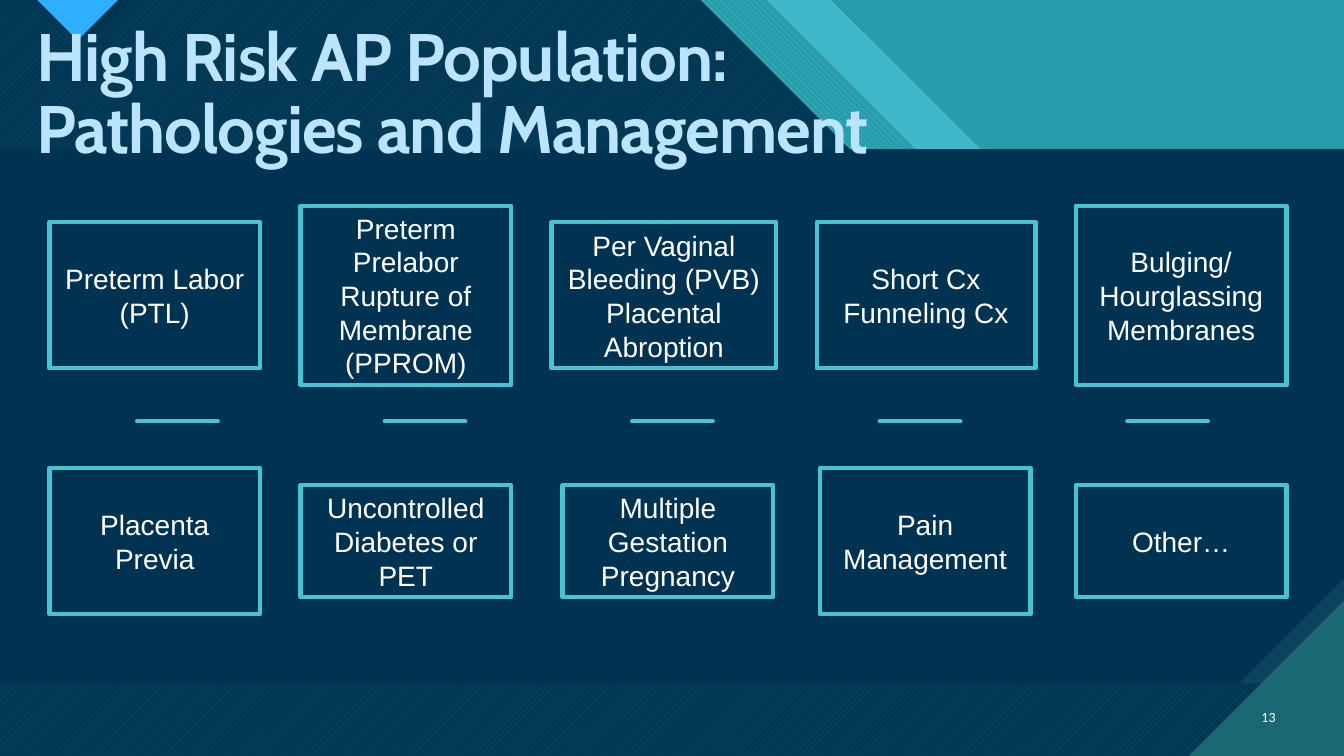
from lxml import etree
from pptx import Presentation
from pptx.dml.color import RGBColor
from pptx.enum.dml import MSO_PATTERN
from pptx.enum.shapes import MSO_CONNECTOR, MSO_SHAPE
from pptx.enum.text import MSO_ANCHOR, PP_ALIGN
from pptx.oxml.ns import qn
from pptx.util import Inches, Pt

RECT = MSO_SHAPE.RECTANGLE
STRAIGHT = MSO_CONNECTOR.STRAIGHT
UP, DOWN = MSO_PATTERN.WIDE_UPWARD_DIAGONAL, MSO_PATTERN.WIDE_DOWNWARD_DIAGONAL
TOP, MIDDLE = MSO_ANCHOR.TOP, MSO_ANCHOR.MIDDLE
LEFT, CENTER, RIGHT = PP_ALIGN.LEFT, PP_ALIGN.CENTER, PP_ALIGN.RIGHT

WIDE, HIGH = 13.33, 7.5
NAVY, AQUA, TEAL, WHITE = "003352", "47C3D3", "299CAB", "FFFFFF"
TITLE = "High Risk AP Population:\vPathologies and Management"
NUMBER = "13"
BAND, FOOT = 1.48, 6.78

DECOR = [
    ([(0, 0), (WIDE, 0), (WIDE, HIGH), (0, HIGH)], (UP, "07415F", "033855")),
    ([(8.25, 0), (WIDE, 0), (WIDE, BAND), (8.25 + BAND, BAND)], TEAL),
    ([(7.6, 0), (8.25, 0), (8.25 + BAND, BAND), (7.6 + BAND, BAND)], "3FB9C9"),
    ([(6.95, 0), (7.6, 0), (7.6 + BAND, BAND), (6.95 + BAND, BAND)], (DOWN, AQUA, TEAL)),
    ([(0.48, 0), (1.31, 0), (0.9, 0.41)], NAVY),
    ([(0.37, 0), (1.17, 0), (0.77, 0.4)], "2FAFFF"),
    ([(0, BAND), (WIDE, BAND), (WIDE, FOOT), (0, FOOT)], "0C4360"),
    ([(0, BAND), (WIDE, BAND), (WIDE, 5.74), (12.29, FOOT), (0, FOOT)], NAVY),
    ([(11.79, HIGH), (WIDE, HIGH), (WIDE, 5.96)], "1B6872"),
]

ROWS = [
    (2.93, [
        (0.49, 2.09, 1.45, ["Preterm Labor", "(PTL)"]),
        (2.98, 2.09, 1.78, ["Preterm Prelabor Rupture of Membrane (PPROM)"]),
        (5.47, 2.23, 1.45, ["Per Vaginal Bleeding (PVB)", "Placental Abroption"]),
        (8.1, 2.17, 1.45, ["Short Cx", "Funneling Cx"]),
        (10.67, 2.09, 1.78, ["Bulging/", "Hourglassing", "Membranes"]),
    ]),
    (5.37, [
        (0.49, 2.09, 1.45, ["Placenta Previa"]),
        (2.98, 2.09, 1.11, ["Uncontrolled Diabetes or PET"]),
        (5.58, 2.09, 1.11, ["Multiple Gestation Pregnancy"]),
        (8.13, 2.09, 1.45, ["Pain Management"]),
        (10.67, 2.09, 1.11, ["Other…"]),
    ]),
]
DASH_X, DASH_Y, DASH_W, DASH_GAP = 1.36, 4.18, 0.8, 2.455


def color(code):
    return RGBColor.from_string(code)


def paint(fill, look):
    if isinstance(look, str):
        fill.solid()
        fill.fore_color.rgb = color(look)
    else:
        fill.patterned()
        fill.pattern = look[0]
        fill.fore_color.rgb = color(look[1])
        fill.back_color.rgb = color(look[2])


def stroke(shape):
    shape.line.color.rgb = color(AQUA)
    shape.line.width = Pt(3)
    edge = shape.get_or_add_ln()
    edge.set("cap", "rnd")
    etree.SubElement(edge, qn("a:round"))


def write(shape, lines, size, face, code, align, anchor):
    frame = shape.text_frame
    frame.word_wrap = True
    frame.vertical_anchor = anchor
    frame.text = "\n".join(lines)
    for para in frame.paragraphs:
        para.alignment = align
        para.font.size = Pt(size)
        para.font.name = face
        para.font.color.rgb = color(code)
    return frame


def draw(shapes, points, look):
    spots = [(Inches(x), Inches(y)) for x, y in points]
    form = shapes.build_freeform(*spots[0])
    form.add_line_segments(spots[1:], close=True)
    shape = form.convert_to_shape()
    shape.shadow.inherit = False
    paint(shape.fill, look)
    shape.line.fill.background()


def head(title):
    title.left, title.top = Inches(0.26), Inches(0.18)
    title.width, title.height = Inches(12.26), Inches(1.56)
    frame = write(title, [TITLE], 48, "Cabin", "BAE4FF", LEFT, TOP)
    para = frame.paragraphs[0]
    para.line_spacing = 0.9
    para.font.bold = True
    for run in para.runs:
        run.font.bold = True
        run._r.get_or_add_rPr().set("spc", "-70")
    title._element.getparent().append(title._element)


def main():
    deck = Presentation()
    deck.slide_width, deck.slide_height = Inches(WIDE), Inches(HIGH)
    slide = deck.slides.add_slide(deck.slide_layouts[5])
    shapes = slide.shapes
    paint(slide.background.fill, NAVY)

    for points, look in DECOR:
        draw(shapes, points, look)
    head(shapes.title)

    for i in range(5):
        x = DASH_X + i * DASH_GAP
        dash = shapes.add_connector(
            STRAIGHT, Inches(x), Inches(DASH_Y), Inches(x + DASH_W), Inches(DASH_Y))
        stroke(dash)
        etree.SubElement(dash._element.spPr, qn("a:effectLst"))

    for mid, boxes in ROWS:
        for x, wide, high, lines in boxes:
            box = shapes.add_shape(
                RECT, Inches(x), Inches(mid - high / 2), Inches(wide), Inches(high))
            box.shadow.inherit = False
            box.fill.background()
            stroke(box)
            write(box, lines, 20, "Arial", WHITE, CENTER, MIDDLE)

    page = shapes.add_textbox(Inches(12.31), Inches(6.91), Inches(0.44), Inches(0.4))
    write(page, [NUMBER], 10, "Calibri", WHITE, RIGHT, MIDDLE)
    deck.save("out.pptx")


if __name__ == "__main__":
    main()
